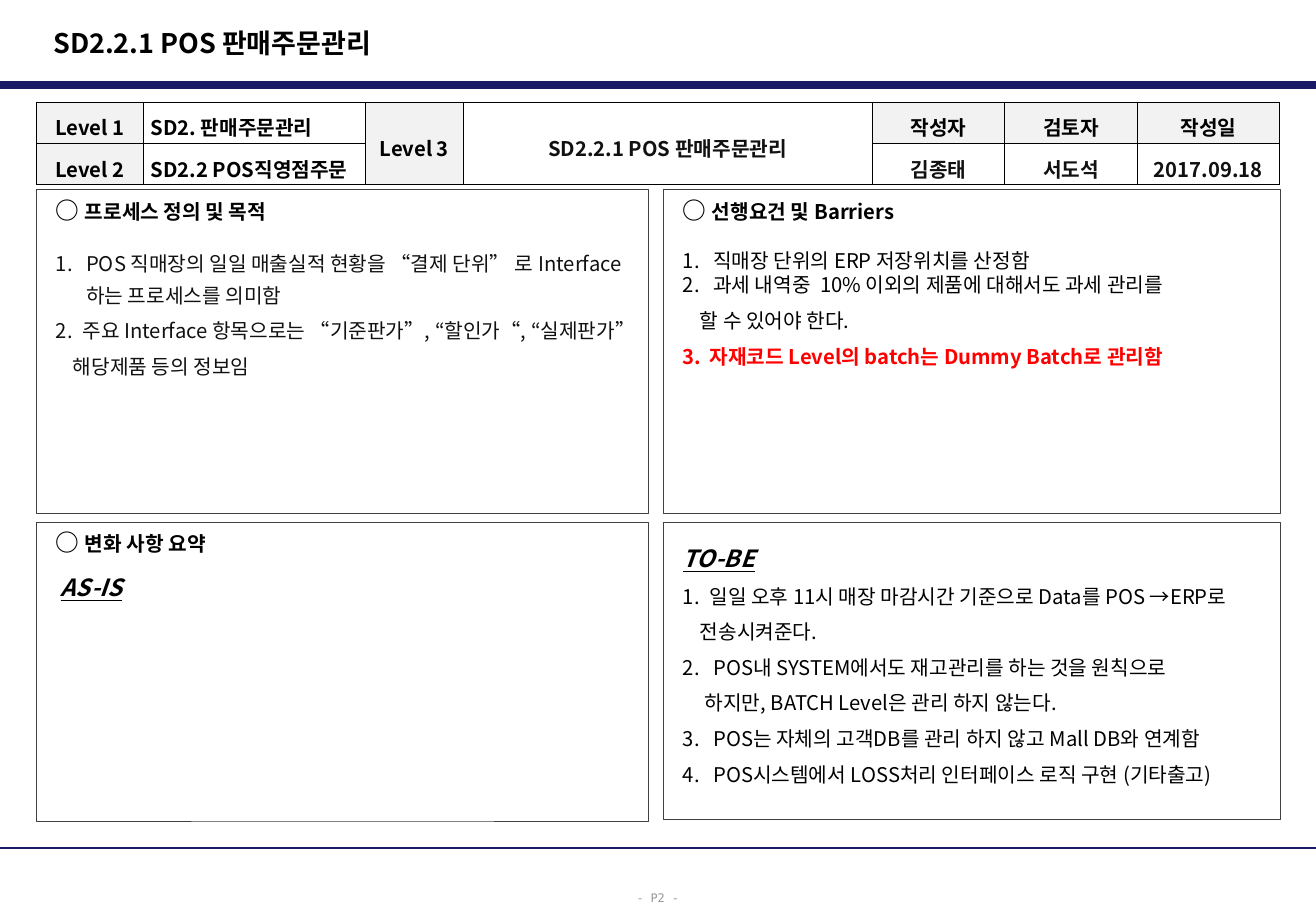
import pptx
import pptx.util
import pptx.dml.color
import pptx.enum.shapes
import pptx.enum.text
import pptx.oxml.ns
import lxml.etree

Inches = pptx.util.Inches
Pt = pptx.util.Pt
RGBColor = pptx.dml.color.RGBColor
qn = pptx.oxml.ns.qn
ALIGN = pptx.enum.text.PP_ALIGN
ANCHOR = pptx.enum.text.MSO_ANCHOR

NAVY = RGBColor(0x19, 0x19, 0x66)
BLACK = RGBColor(0, 0, 0)
INK = RGBColor(0x11, 0x11, 0x11)
BORDER = RGBColor(0x40, 0x40, 0x40)
GRAY = RGBColor(0x96, 0x96, 0x96)
LABEL_FILL = RGBColor(0xF2, 0xF2, 0xF2)
RED = RGBColor(0xFF, 0, 0)
FONT = "Noto Sans CJK KR"


def add_span(para, text, size=12, color=BLACK, bold=False, heading=False, font=FONT):
    span = para.add_run()
    span.text = text
    span.font.size = Pt(size)
    span.font.name = font
    span.font.bold = bold
    span.font.color.rgb = color
    if heading:
        span.font.italic = True
        span.font.underline = True
    east_asian = lxml.etree.SubElement(span.font._element, qn("a:ea"))
    east_asian.set("typeface", font)


def set_layout(para, before=0, spacing=1.0, left=0, hanging=0, number=None):
    properties = para._p.get_or_add_pPr()
    properties.set("marL", str(Inches(left)))
    properties.set("indent", str(-Inches(hanging)))
    if number:
        bullet = lxml.etree.SubElement(properties, qn("a:buAutoNum"))
        bullet.set("type", "arabicPeriod")
        bullet.set("startAt", str(number))
    para.line_spacing = spacing
    para.space_before = Pt(before)


deck = pptx.Presentation()
deck.slide_width = Inches(10.83)
deck.slide_height = Inches(7.5)
page = deck.slides.add_slide(deck.slide_layouts[6])

# Rules under the title and above the footer
for y, width in ((0.7, 4.5), (6.98, 1.5)):
    rule = page.shapes.add_connector(
        pptx.enum.shapes.MSO_CONNECTOR.STRAIGHT,
        Inches(0), Inches(y), Inches(10.83), Inches(y))
    rule.line.color.rgb = NAVY
    rule.line.width = Pt(width)
    lxml.etree.SubElement(rule._element.spPr, qn("a:effectLst"))

# Title
title = page.shapes.add_textbox(Inches(0.34), Inches(0.16), Inches(7.11), Inches(0.38))
title.text_frame.word_wrap = True
title.text_frame.vertical_anchor = ANCHOR.MIDDLE
add_span(title.text_frame.paragraphs[0], "SD2.2.1 POS 판매주문관리", size=16, bold=True)

# Page number
footer = page.shapes.add_textbox(Inches(5.14), Inches(7.25), Inches(0.56), Inches(0.25))
footer.text_frame.word_wrap = False
footer_para = footer.text_frame.paragraphs[0]
footer_para.line_spacing = 1.3
add_span(footer_para, "- P2 -", size=7, color=GRAY, font="DejaVu Sans Mono")

# Document table
COLUMNS = (0.88, 1.83, 0.8, 3.37, 1.09, 1.09, 1.17)
ROWS = (
    ("Level 1", "SD2. 판매주문관리", "Level 3", "SD2.2.1 POS 판매주문관리", "작성자", "검토자", "작성일"),
    ("Level 2", "SD2.2 POS직영점주문", "", "", "김종태", "서도석", "2017.09.18"),
)
LABELS = ("Level 1", "Level 2", "Level 3", "작성자", "검토자", "작성일")
table = page.shapes.add_table(
    2, 7, Inches(0.3), Inches(0.84), Inches(10.24), Inches(0.68)).table
table.first_row = False
table.horz_banding = False
for column, width in zip(table.columns, COLUMNS):
    column.width = Inches(width)
for row in table.rows:
    row.height = Inches(0.34)
for merged in (2, 3):
    table.cell(0, merged).merge(table.cell(1, merged))
for r, texts in enumerate(ROWS):
    for c, text in enumerate(texts):
        cell = table.cell(r, c)
        cell.margin_left = cell.margin_right = Inches(0.06)
        cell.margin_top = cell.margin_bottom = Inches(0.01)
        cell.vertical_anchor = ANCHOR.MIDDLE
        for side in ("lnL", "lnR", "lnT", "lnB"):
            edge = lxml.etree.SubElement(cell._tc.get_or_add_tcPr(), qn("a:" + side))
            edge.set("w", str(Pt(0.5)))
            paint = lxml.etree.SubElement(edge, qn("a:solidFill"))
            lxml.etree.SubElement(paint, qn("a:srgbClr")).set("val", str(BLACK))
        if text in LABELS:
            cell.fill.solid()
            cell.fill.fore_color.rgb = LABEL_FILL
        else:
            cell.fill.background()
        if text:
            para = cell.text_frame.paragraphs[0]
            para.alignment = ALIGN.LEFT if c == 1 else ALIGN.CENTER
            para.line_spacing = 1.3
            para.space_before = Pt(2.4)
            add_span(para, text, bold=True,
                     color=BLACK if text in LABELS or c == 1 else INK)

# Panels: place, top inset, then paragraphs of (spans, layout)
TITLE_SPAN = ("○ ", dict(size=14, bold=True))
BOLD = dict(bold=True)
HEADING = dict(size=14, bold=True, heading=True)
PLAIN = dict(color=INK)
LOOSE = dict(before=2.4, spacing=1.3)
WIDE = dict(left=0.25, hanging=0.25)
NARROW = dict(left=0.22, hanging=0.22)
PANELS = (
    ((0.3, 1.56, 5.04, 2.67), 0.05, (
        ((TITLE_SPAN, ("프로세스 정의 및 목적", BOLD)), {}),
        ((("POS 직매장의 일일 매출실적 현황을 “결제 단위” 로 Interface 하는 프로세스를 의미함", PLAIN),),
         dict(WIDE, before=12, spacing=1.3, number=1)),
        ((("주요 Interface 항목으로는 “기준판가”, “할인가“, “실제판가”", PLAIN),),
         dict(NARROW, **LOOSE, number=2)),
        ((("해당제품 등의 정보임", PLAIN),), dict(LOOSE, left=0.14)),
    )),
    ((5.46, 1.56, 5.08, 2.67), 0.05, (
        ((TITLE_SPAN, ("선행요건 및 Barriers", BOLD)), {}),
        ((("직매장 단위의 ERP 저장위치를 산정함", {}),), dict(WIDE, before=14.6, number=1)),
        ((("과세 내역중  10% 이외의 제품에 대해서도 과세 관리를", {}),), dict(WIDE, number=2)),
        ((("할 수 있어야 한다.", {}),), dict(LOOSE, left=0.14)),
        ((("자재코드 Level의 batch는 Dummy Batch로 관리함", dict(color=RED, bold=True)),),
         dict(NARROW, **LOOSE, number=3)),
    )),
    ((0.3, 4.3, 5.04, 2.46), 0.05, (
        ((TITLE_SPAN, ("변화 사항 요약", BOLD)), {}),
        ((("AS-IS", HEADING),), dict(before=9.7, left=0.04)),
    )),
    ((5.46, 4.3, 5.08, 2.45), 0.18, (
        ((("TO-BE", HEADING),), {}),
        ((("일일 오후 11시 매장 마감시간 기준으로 Data를 POS →ERP로", {}),),
         dict(NARROW, **LOOSE, number=1)),
        ((("전송시켜준다.", {}),), dict(LOOSE, left=0.14)),
        ((("POS내 SYSTEM에서도 재고관리를 하는 것을 원칙으로", {}),), dict(WIDE, **LOOSE, number=2)),
        ((("하지만, BATCH Level은 관리 하지 않는다.", {}),), dict(LOOSE, left=0.18)),
        ((("POS는 자체의 고객DB를 관리 하지 않고 Mall DB와 연계함", {}),), dict(WIDE, **LOOSE, number=3)),
        ((("POS시스템에서 LOSS처리 인터페이스 로직 구현 (기타출고)", {}),), dict(WIDE, **LOOSE, number=4)),
    )),
)
for place, top_inset, paragraphs in PANELS:
    box = page.shapes.add_shape(
        pptx.enum.shapes.MSO_SHAPE.RECTANGLE, *[Inches(value) for value in place])
    box.shadow.inherit = False
    box.fill.background()
    box.line.color.rgb = BORDER
    box.line.width = Pt(0.5)
    frame = box.text_frame
    frame.word_wrap = True
    frame.vertical_anchor = ANCHOR.TOP
    frame.margin_left = Inches(0.16)
    frame.margin_right = Inches(0.1)
    frame.margin_top = Inches(top_inset)
    frame.margin_bottom = Inches(0.05)
    for index, (spans, layout) in enumerate(paragraphs):
        para = frame.add_paragraph() if index else frame.paragraphs[0]
        para.alignment = ALIGN.LEFT
        set_layout(para, **layout)
        for text, style in spans:
            add_span(para, text, **style)

deck.save("out.pptx")
